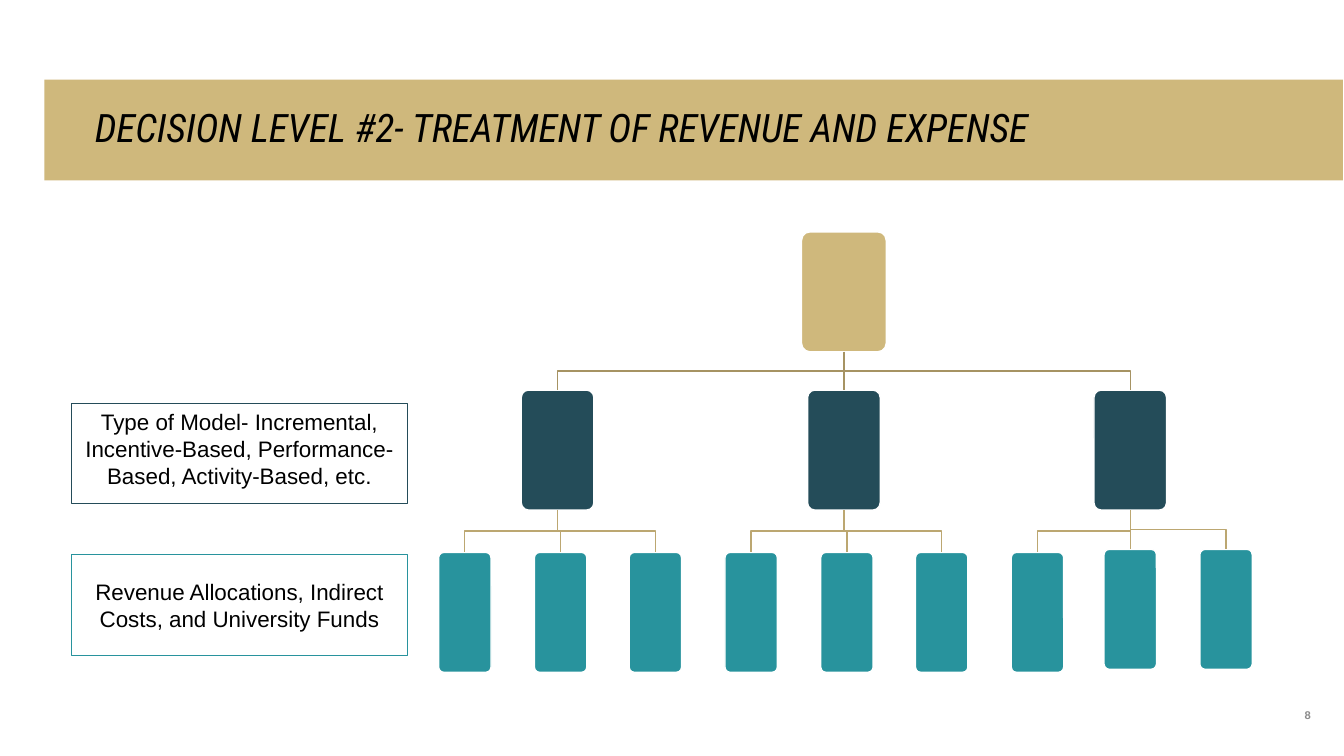
import pptx
import pptx.util
import pptx.dml.color
import pptx.enum.shapes
import pptx.enum.text
import pptx.oxml.ns
from dataclasses import dataclass
from lxml import etree

Inches = pptx.util.Inches
Pt = pptx.util.Pt
Kind = pptx.enum.shapes.MSO_SHAPE
Align = pptx.enum.text.PP_ALIGN
Anchor = pptx.enum.text.MSO_ANCHOR


@dataclass(frozen=True)
class Theme:
    gold: str = "CFB87C"
    navy: str = "244C59"
    teal: str = "28939D"
    trunk: str = "A69363"
    twig: str = "BCA771"
    white: str = "FFFFFF"
    black: str = "000000"
    gray: str = "8C8C8C"
    head: str = "Roboto Condensed"
    body: str = "Arial"
    title: int = 28
    label: int = 16
    small: int = 8


THEME = Theme()


def rgb(code):
    return pptx.dml.color.RGBColor.from_string(code)


def write(shape, text, size, font, color, align, anchor, insets=(0.1, 0.05, 0.1, 0.05)):
    frame = shape.text_frame
    frame.text = text
    frame.word_wrap = True
    frame.vertical_anchor = anchor
    (frame.margin_left, frame.margin_top,
     frame.margin_right, frame.margin_bottom) = map(Inches, insets)
    para = frame.paragraphs[0]
    para.alignment = align
    run = para.runs[0].font
    run.size, run.name = Pt(size), font
    run.color.rgb = rgb(color)
    return para


def block(slide, kind, box, fill=None, line=None, width=1):
    shape = slide.shapes.add_shape(kind, *map(Inches, box))
    shape.shadow.inherit = False
    if fill:
        shape.fill.solid()
        shape.fill.fore_color.rgb = rgb(fill)
    else:
        shape.fill.background()
    if line:
        shape.line.color.rgb = rgb(line)
        shape.line.width = Pt(width)
    else:
        shape.line.fill.background()
    return shape


def banner(slide, box, text):
    shape = block(slide, Kind.RECTANGLE, box, THEME.gold)
    para = write(shape, text, THEME.title, THEME.head, THEME.black,
                 Align.LEFT, Anchor.MIDDLE, (0.5, 0.05, 1, 0.05))
    para.line_spacing = 0.9
    para.runs[0].font.italic = True


def node(slide, mid, top, width, fill):
    box = (mid - width / 2, top, width, 1.19)
    shape = block(slide, Kind.ROUNDED_RECTANGLE, box, fill, THEME.white)
    shape.adjustments[0] = 0.1
    return shape


def link(slide, upper, lower, color):
    """Join the bottom of one node to the top of another."""
    x1, y1 = upper.left + upper.width // 2, upper.top + upper.height
    x2, y2 = lower.left + lower.width // 2, lower.top
    if abs(x1 - x2) < Inches(0.01):
        line = slide.shapes.add_connector(
            pptx.enum.shapes.MSO_CONNECTOR.STRAIGHT, x1, y1, x2, y2)
        line.begin_connect(upper, 2)
        line.end_connect(lower, 0)
        etree.SubElement(line._element.spPr, pptx.oxml.ns.qn("a:effectLst"))
    else:
        half = (y1 + y2) // 2
        path = slide.shapes.build_freeform(x1, y1)
        path.add_line_segments([(x1, half), (x2, half), (x2, y2)], close=False)
        line = path.convert_to_shape()
        line.fill.background()
        line.shadow.inherit = False
    line.line.color.rgb = rgb(color)
    line.line.width = Pt(1)


def tree(slide, box):
    left, top, width, height = box
    mid = left + width / 2
    root = node(slide, mid, top, 0.84, THEME.gold)
    # Offset of each leaf from its branch, and its rise above the row
    even = [(-0.92, 0), (0.03, 0), (0.97, 0)]
    last = [(-0.92, 0), (0, 0.03), (0.95, 0.03)]
    for step, leaves in zip((-1, 0, 1), (even, even, last)):
        center = mid + step * 2.84
        branch = node(slide, center, top + 1.57, 0.72, THEME.navy)
        link(slide, root, branch, THEME.trunk)
        for shift, rise in leaves:
            leaf = node(slide, center + shift, top + height - 1.19 - rise,
                        0.52, THEME.teal)
            link(slide, branch, leaf, THEME.twig)


def labels(slide, box):
    left, top, width, height = box
    rows = [
        ("Type of Model- Incremental, Incentive-Based, Performance-Based, "
         "Activity-Based, etc.", THEME.navy, Anchor.TOP),
        ("Revenue Allocations, Indirect Costs, and University Funds",
         THEME.teal, Anchor.MIDDLE),
    ]
    for i, (text, color, anchor) in enumerate(rows):
        place = (left, top + i * 1.5, width, height - 1.5)
        shape = block(slide, Kind.RECTANGLE, place, line=color, width=0.75)
        write(shape, text, THEME.label, THEME.body, THEME.black,
              Align.CENTER, anchor)


def number(slide, box, text):
    shape = slide.shapes.add_textbox(*map(Inches, box))
    para = write(shape, text, THEME.small, THEME.body, THEME.gray,
                 Align.RIGHT, Anchor.BOTTOM, (0, 0, 0, 0))
    para.runs[0].font.bold = True


def main():
    deck = pptx.Presentation()
    deck.slide_width, deck.slide_height = Inches(13.33), Inches(7.5)
    slide = deck.slides.add_slide(deck.slide_layouts[6])
    tree(slide, (4.35, 2.3, 8.04, 4.37))
    banner(slide, (0.44, 0.79, 12.88, 1),
           "DECISION LEVEL #2- TREATMENT OF REVENUE AND EXPENSE")
    number(slide, (12.15, 6.66, 0.85, 0.5), "8")
    labels(slide, (0.71, 4, 3.33, 2.5))
    deck.save("out.pptx")


if __name__ == "__main__":
    main()
